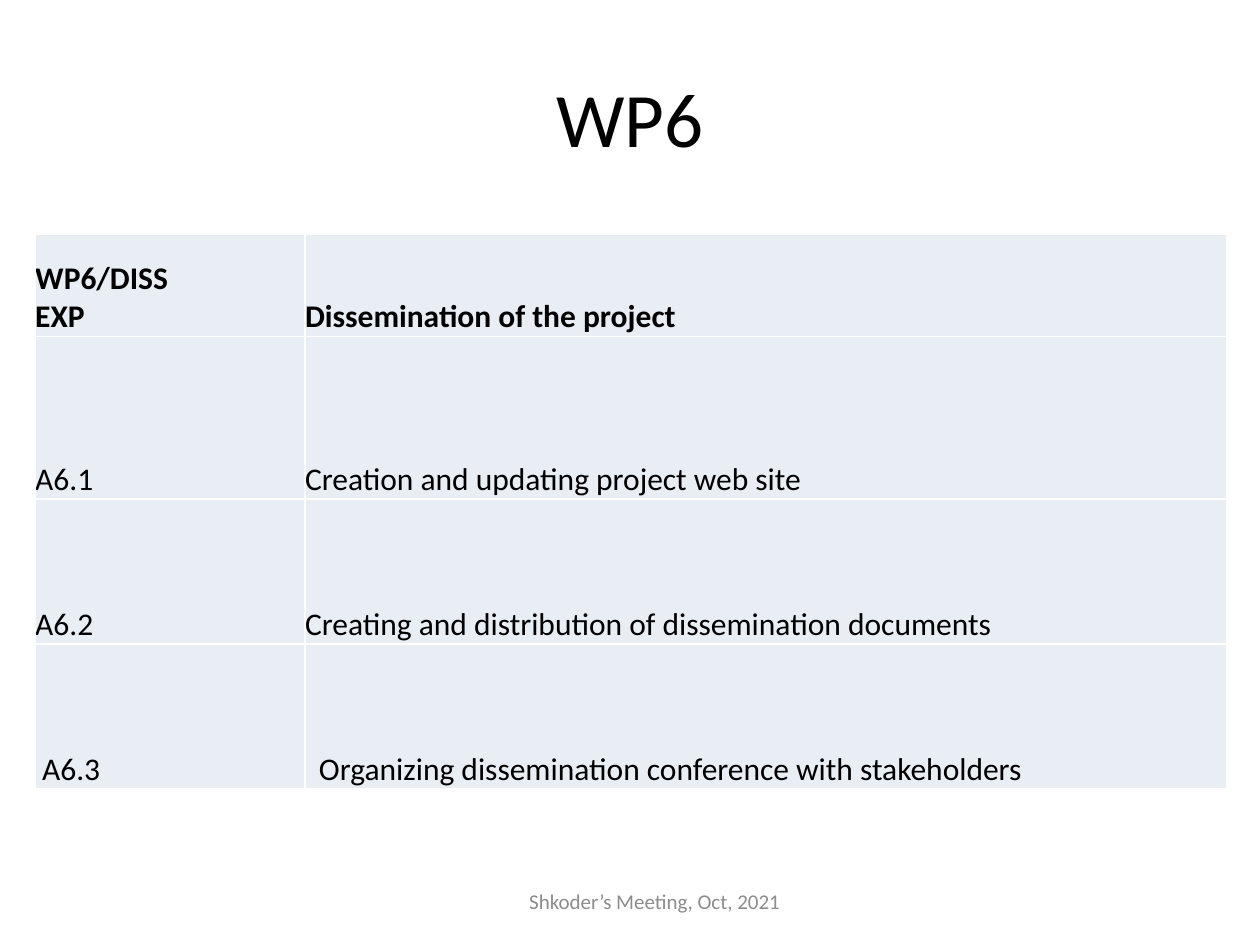
"""Build the WP6 dissemination slide."""
from lxml import etree
from pptx import Presentation
from pptx.dml.color import RGBColor
from pptx.enum.text import MSO_ANCHOR, PP_ALIGN
from pptx.oxml.ns import qn
from pptx.util import Cm, Pt

BOTTOM, MIDDLE = MSO_ANCHOR.BOTTOM, MSO_ANCHOR.MIDDLE
LEFT, CENTER = PP_ALIGN.LEFT, PP_ALIGN.CENTER
TITLE_ONLY = 5

COLUMN_WIDTHS = (5.44, 18.57)
ROW_HEIGHTS = (2.06, 3.28, 2.92, 2.92)
ACTIVITIES = (
    ("WP6/DISS\vEXP", "Dissemination of the project"),
    ("A6.1", "Creation and updating project web site"),
    ("A6.2", "Creating and distribution of dissemination documents"),
    ("A6.3", "Organizing dissemination conference with stakeholders"),
)
LAST_ROW_INDENTS = (0.14, 0.28)


def rgb(hex_colour):
    """Turn a hex string into a colour."""
    return RGBColor.from_string(hex_colour)


def set_format(target, values):
    """Set every attribute named in a dict of format values."""
    for name, value in values.items():
        setattr(target, name, value)


def write_text(frame, wording, size, colour, align, bold=False):
    """Write one formatted paragraph into a text frame."""
    frame.text = wording
    paragraph = frame.paragraphs[0]
    paragraph.alignment = align
    for run in paragraph.runs:
        set_format(run.font, {"name": "Calibri", "size": Pt(size), "bold": bold})
        run.font.color.rgb = rgb(colour)


def add_borders(cell, colour, width):
    """Draw a solid line on all four sides of a cell."""
    properties = cell._tc.get_or_add_tcPr()
    for position, side in enumerate(("a:lnL", "a:lnR", "a:lnT", "a:lnB")):
        line = etree.Element(qn(side), w=str(Pt(width)))
        fill = etree.SubElement(line, qn("a:solidFill"))
        etree.SubElement(fill, qn("a:srgbClr"), val=colour)
        properties.insert(position, line)


def add_title(slide, wording):
    """Place and fill the title placeholder."""
    title = slide.shapes.title
    set_format(title, {"left": Cm(1.27), "top": Cm(0.76),
                       "width": Cm(22.86), "height": Cm(3.18)})
    title.text_frame.vertical_anchor = MIDDLE
    write_text(title.text_frame, wording, 44, "000000", CENTER)


def fill_cell(cell, wording, bold, indent):
    """Fill and format one table cell."""
    set_format(cell, {"margin_left": Cm(indent), "margin_right": 0,
                      "margin_top": 0, "margin_bottom": 0,
                      "vertical_anchor": BOTTOM})
    write_text(cell.text_frame, wording, 18, "000000", LEFT, bold)
    cell.fill.solid()
    cell.fill.fore_color.rgb = rgb("E9EDF4")
    add_borders(cell, "FFFFFF", 1)


def add_activity_table(slide):
    """Add the table of work package activities."""
    table = slide.shapes.add_table(
        len(ROW_HEIGHTS), len(COLUMN_WIDTHS), Cm(0.71), Cm(4.72),
        Cm(sum(COLUMN_WIDTHS)), Cm(sum(ROW_HEIGHTS))).table
    set_format(table, {"first_row": False, "horz_banding": False})
    for column, width in zip(table.columns, COLUMN_WIDTHS):
        column.width = Cm(width)
    for row, height in zip(table.rows, ROW_HEIGHTS):
        row.height = Cm(height)
    last = len(ACTIVITIES) - 1
    for r, activity in enumerate(ACTIVITIES):
        for c, wording in enumerate(activity):
            indent = LAST_ROW_INDENTS[c] if r == last else 0
            fill_cell(table.cell(r, c), wording, r == 0, indent)


def add_footer(slide, wording):
    """Add the centred meeting line at the foot of the slide."""
    footer = slide.shapes.add_textbox(Cm(8.69), Cm(17.65), Cm(9.02), Cm(1.02))
    set_format(footer.text_frame, {"word_wrap": True, "vertical_anchor": MIDDLE})
    write_text(footer.text_frame, wording, 12, "8C8C8C", CENTER)


def main():
    """Build and save the slide."""
    deck = Presentation()
    set_format(deck, {"slide_width": Cm(25.4), "slide_height": Cm(19.05)})
    slide = deck.slides.add_slide(deck.slide_layouts[TITLE_ONLY])
    add_title(slide, "WP6")
    add_activity_table(slide)
    add_footer(slide, "Shkoder’s Meeting, Oct, 2021")
    deck.save("out.pptx")


if __name__ == "__main__":
    main()
